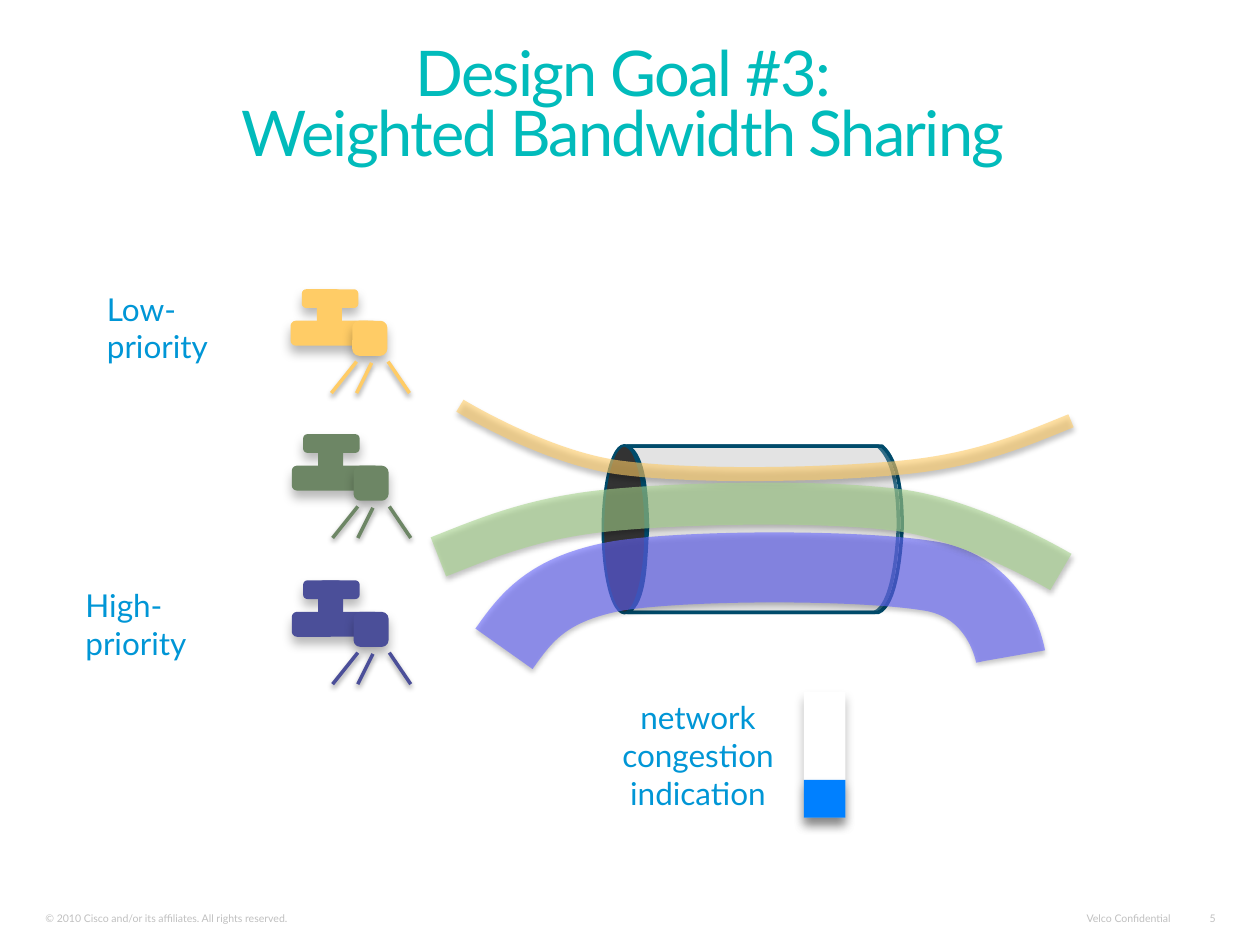
from lxml.etree import SubElement
from pptx import Presentation
from pptx.dml.color import RGBColor
from pptx.enum.shapes import MSO_CONNECTOR as CONNECTOR, MSO_SHAPE as SHAPE
from pptx.enum.text import MSO_ANCHOR as ANCHOR, MSO_AUTO_SIZE as AUTO, PP_ALIGN as ALIGN
from pptx.oxml.ns import qn
from pptx.util import Inches, Pt

FONT = "Lato"
TEAL, BLUE, GREY, OUTLINE = "01BBBB", "0096D6", "C0C0C0", "004B6B"
SOLID_SHADOW = dict(alpha=27, blur=6, distance=4)
LINE_SHADOW = dict(alpha=38, blur=3.1, distance=1.6)

TITLE = "Design Goal #3:\vWeighted Bandwidth Sharing"
FOOTERS = [
    ("© 2010 Cisco and/or its affiliates. All rights reserved.", (0.27, 7.19, 3.6, 0.19), ALIGN.LEFT),
    ("Velco Confidential", (8.49, 7.19, 0.89, 0.19), ALIGN.RIGHT),
    ("5", (9.46, 7.19, 0.28, 0.19), ALIGN.RIGHT),
]
LABELS = [
    (["network", "congestion", "indication"], (4.83, 5.49, 1.42, 1.01), ALIGN.CENTER, False),
    (["Low-priority"], (0.75, 2.25, 1.51, 0.4), ALIGN.LEFT, True),
    (["High-priority"], (0.58, 4.6, 1.56, 0.4), ALIGN.LEFT, True),
]
CAMERAS = [(2.32, 2.31, "FFCC66"), (2.33, 3.46, "6D8665"), (2.33, 4.62, "4B4F99")]
CAMERA_BODY = [
    ((0.09, 0, 0.42, 0.12), SOLID_SHADOW),
    ((0, 0.25, 0.67, 0.17), SOLID_SHADOW),
    ((0.49, 0.25, 0.25, 0.25), SOLID_SHADOW),
    ((0.21, 0, 0.17, 0.33), None),
]
CAMERA_LEGS = [(0.51, 0.56, 0.31, 0.81), (0.93, 0.81, 0.76, 0.56), (0.51, 0.81, 0.63, 0.57)]

PIPE = ((4.95, 4.86), [
    [(6.94, 4.86)],
    [(7.08, 4.81), (7.12, 4.4), (7.13, 4.18)],
    [(7.13, 3.96), (7.11, 3.66), (6.97, 3.54)],
    [(4.95, 3.54)],
    [(5.09, 3.62), (5.1, 3.94), (5.11, 4.18)],
    [(5.09, 4.43), (5.1, 4.78), (4.95, 4.86)],
])
PIPE_MOUTH = (4.29, 4.03, 1.33, 0.34)
FLOWS = [
    ("6666FF", 40, (4, 5.15), [
        [(4.17, 4.91), (4.34, 4.67), (4.91, 4.57)],
        [(5.48, 4.48), (6.9, 4.48), (7.42, 4.58)],
        [(7.94, 4.69), (8.02, 5.21), (8.02, 5.21)],
    ]),
    ("FFCC66", 8, (8.5, 3.34), [
        [(8.13, 3.49), (7.77, 3.65), (7.17, 3.71)],
        [(6.57, 3.77), (5.5, 3.79), (4.91, 3.71)],
        [(4.32, 3.63), (3.65, 3.22), (3.65, 3.22)],
    ]),
    ("A7D48D", 24, (3.48, 4.42), [
        [(3.86, 4.27), (4.23, 4.11), (4.84, 4.05)],
        [(5.45, 3.99), (6.54, 3.97), (7.14, 4.05)],
        [(7.73, 4.13), (8.42, 4.54), (8.42, 4.54)],
    ]),
]
GAUGE = [((6.38, 5.49, 0.33, 1), "FFFFFF"), ((6.38, 6.19, 0.33, 0.3), "0080FF")]


def paint(fill, color, alpha=100):
    if color is None:
        fill.background()
        return
    fill.solid()
    fill.fore_color.rgb = RGBColor.from_string(color)
    if alpha < 100:
        node = fill._xPr.find(qn("a:solidFill"))[0]
        SubElement(node, qn("a:alpha"), val=str(alpha * 1000))


def add_effects(shape, shadow):
    effects = SubElement(shape._element.spPr, qn("a:effectLst"))
    if shadow:
        outer = SubElement(
            effects, qn("a:outerShdw"), blurRad=str(Pt(shadow["blur"])),
            dist=str(Pt(shadow["distance"])), dir="5400000", algn="ctr", rotWithShape="0")
        black = SubElement(outer, qn("a:srgbClr"), val="000000")
        SubElement(black, qn("a:alpha"), val=str(shadow["alpha"] * 1000))


def set_line(shape, color, width, alpha=100):
    paint(shape.line.fill, color, alpha)
    if color:
        shape.line.width = Pt(width)


def style(shape, fill=None, fill_alpha=100, line=None, width=2, line_alpha=100, shadow=None):
    paint(shape.fill, fill, fill_alpha)
    set_line(shape, line, width, line_alpha)
    add_effects(shape, shadow)


def write(frame, lines, size=18, color=BLUE, align=ALIGN.LEFT, anchor=ANCHOR.TOP,
          wrap=True, spacing=None, tracking=None):
    frame.word_wrap = wrap
    frame.auto_size = AUTO.NONE
    frame.vertical_anchor = anchor
    for index, line in enumerate(lines):
        paragraph = frame.add_paragraph() if index else frame.paragraphs[0]
        paragraph.text = line
        paragraph.alignment = align
        paragraph.line_spacing = spacing
        for run in paragraph.runs:
            run.font.name, run.font.size = FONT, Pt(size)
            paint(run.font.fill, color)
            if tracking:
                run.font._element.set("spc", str(tracking * 100))


def curve(start, segments, closed=False, shift=0):
    points = [start, *(point for segment in segments for point in segment)]
    corners = [(Inches(x + shift), Inches(y)) for x, y in points]
    builder = slide.shapes.build_freeform(*corners[0])
    builder.add_line_segments(corners[1:], close=closed)
    shape = builder.convert_to_shape()
    steps = iter(list(shape._element.spPr.iter(qn("a:lnTo"))))
    for segment in segments:
        first, *others = [next(steps) for _ in segment]
        if others:
            first.tag = qn("a:cubicBezTo")
            for step in others:
                first.append(step[0])
                step.getparent().remove(step)
    return shape


def place(parent, kind, box):
    return parent.add_shape(kind, *map(Inches, box))


deck = Presentation()
deck.slide_width, deck.slide_height = Inches(10), Inches(7.5)
slide = deck.slides.add_slide(deck.slide_layouts[5])

heading = slide.shapes.title
heading.left, heading.top, heading.width, heading.height = map(Inches, (0.25, 0, 9.39, 1.39))
write(heading.text_frame, [TITLE], size=36, color=TEAL, align=ALIGN.CENTER,
      anchor=ANCHOR.BOTTOM, spacing=0.8, tracking=-1)

for text, box, align in FOOTERS:
    footer = slide.shapes.add_textbox(*map(Inches, box)).text_frame
    footer.margin_top = footer.margin_bottom = Inches(0.04)
    footer.margin_left = footer.margin_right = Inches(0.09)
    write(footer, [text], size=6, color=GREY, align=align, anchor=ANCHOR.BOTTOM,
          wrap=align == ALIGN.LEFT)

style(curve(*PIPE, closed=True), fill="7F7F7F", fill_alpha=25, line=OUTLINE)
mouth = place(slide.shapes, SHAPE.OVAL, PIPE_MOUTH)
mouth.rotation = 270
style(mouth, fill="333333", line=OUTLINE, width=1.5)
style(curve(*PIPE, closed=True, shift=0.03), fill="F8F8F8", fill_alpha=20, line=OUTLINE)

for color, width, start, segments in FLOWS:
    style(curve(start, segments), line=color, width=width, line_alpha=60, shadow=LINE_SHADOW)

gauge = slide.shapes.add_group_shape().shapes
for box, color in GAUGE:
    style(place(gauge, SHAPE.RECTANGLE, box), fill=color, shadow=SOLID_SHADOW)

for left, top, color in CAMERAS:
    camera = slide.shapes.add_group_shape().shapes
    for (x, y, width, height), shadow in CAMERA_BODY:
        part = place(camera, SHAPE.ROUNDED_RECTANGLE, (left + x, top + y, width, height))
        style(part, fill=color, line=color, shadow=shadow)
    for x1, y1, x2, y2 in CAMERA_LEGS:
        ends = (left + x1, top + y1, left + x2, top + y2)
        leg = camera.add_connector(CONNECTOR.STRAIGHT, *map(Inches, ends))
        set_line(leg, color, 2)
        add_effects(leg, LINE_SHADOW)

for lines, box, align, wrap in LABELS:
    label = slide.shapes.add_textbox(*map(Inches, box)).text_frame
    write(label, lines, align=align, wrap=wrap)

deck.save("out.pptx")
